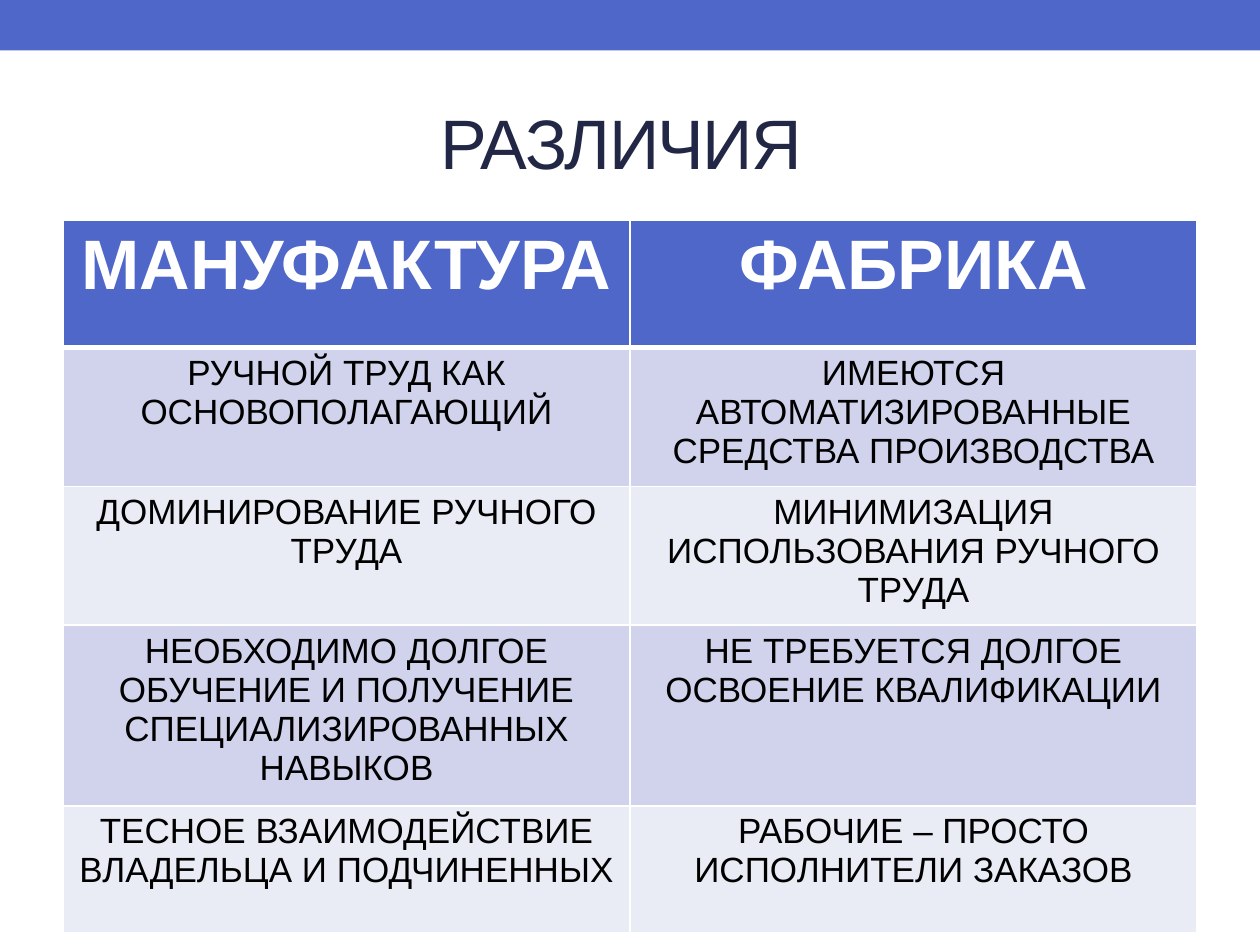
from dataclasses import dataclass

from lxml import etree
from pptx import Presentation
from pptx.dml.color import RGBColor
from pptx.enum.shapes import MSO_SHAPE
from pptx.enum.text import MSO_ANCHOR, PP_ALIGN
from pptx.oxml.ns import qn
from pptx.util import Inches, Pt

RECTANGLE = MSO_SHAPE.RECTANGLE
MIDDLE = MSO_ANCHOR.MIDDLE
CENTER = PP_ALIGN.CENTER


@dataclass(frozen=True)
class Theme:
    font: str = "Arial"
    accent: str = "4E67C8"
    title: str = "212745"
    white: str = "FFFFFF"
    body: str = "000000"
    bands: tuple = ("D0D3EB", "E9EBF5")
    large_size: int = 40
    body_size: int = 20
    line: int = 1
    header_line: int = 3


THEME = Theme()

COMPARISON = [
    ("МАНУФАКТУРА", "ФАБРИКА"),
    ("РУЧНОЙ ТРУД КАК ОСНОВОПОЛАГАЮЩИЙ",
     "ИМЕЮТСЯ АВТОМАТИЗИРОВАННЫЕ СРЕДСТВА ПРОИЗВОДСТВА"),
    ("ДОМИНИРОВАНИЕ РУЧНОГО ТРУДА",
     "МИНИМИЗАЦИЯ ИСПОЛЬЗОВАНИЯ РУЧНОГО ТРУДА"),
    ("НЕОБХОДИМО ДОЛГОЕ ОБУЧЕНИЕ И ПОЛУЧЕНИЕ СПЕЦИАЛИЗИРОВАННЫХ НАВЫКОВ",
     "НЕ ТРЕБУЕТСЯ ДОЛГОЕ ОСВОЕНИЕ КВАЛИФИКАЦИИ"),
    ("ТЕСНОЕ ВЗАИМОДЕЙСТВИЕ ВЛАДЕЛЬЦА И ПОДЧИНЕННЫХ",
     "РАБОЧИЕ – ПРОСТО ИСПОЛНИТЕЛИ ЗАКАЗОВ"),
]


def paint(fill, color):
    fill.solid()
    fill.fore_color.rgb = RGBColor.from_string(color)


def write(text_frame, text, size, color, bold=False):
    paragraph = text_frame.paragraphs[0]
    paragraph.alignment = CENTER
    run = paragraph.add_run()
    run.text = text
    run.font.name = THEME.font
    run.font.size = Pt(size)
    run.font.bold = bold
    run.font.color.rgb = RGBColor.from_string(color)
    return run


def add_top_band(slide):
    band = slide.shapes.add_shape(RECTANGLE, 0, 0, Inches(10), Inches(0.4))
    band.shadow.inherit = False
    paint(band.fill, THEME.accent)
    band.line.fill.background()


def add_title(slide, text):
    box = slide.shapes.add_textbox(Inches(0.5), Inches(0.58), Inches(9), Inches(1.08))
    box.text_frame.word_wrap = True
    box.text_frame.vertical_anchor = MIDDLE
    run = write(box.text_frame, text, THEME.large_size, THEME.title)
    run.font._element.set("spc", "-100")


def set_borders(cell, top, bottom):
    """Draw white borders; top and bottom are widths in points."""
    properties = cell._tc.get_or_add_tcPr()
    widths = {"lnL": THEME.line, "lnR": THEME.line, "lnT": top, "lnB": bottom}
    for index, (side, width) in enumerate(widths.items()):
        line = etree.Element(qn(f"a:{side}"), w=str(Pt(width)))
        solid = etree.SubElement(line, qn("a:solidFill"))
        etree.SubElement(solid, qn("a:srgbClr"), val=THEME.white)
        properties.insert(index, line)


def add_comparison_table(slide, rows):
    row_height = Inches(1.01)
    table = slide.shapes.add_table(
        len(rows), len(rows[0]), Inches(0.5), Inches(1.75),
        Inches(9), row_height * len(rows)).table
    for row_index, texts in enumerate(rows):
        table.rows[row_index].height = row_height
        header = row_index == 0
        for column_index, text in enumerate(texts):
            cell = table.cell(row_index, column_index)
            if header:
                paint(cell.fill, THEME.accent)
                write(cell.text_frame, text, THEME.large_size, THEME.white, bold=True)
            else:
                paint(cell.fill, THEME.bands[(row_index - 1) % 2])
                write(cell.text_frame, text, THEME.body_size, THEME.body)
            set_borders(
                cell,
                top=THEME.header_line if row_index == 1 else THEME.line,
                bottom=THEME.header_line if header else THEME.line)


def main():
    presentation = Presentation()
    presentation.slide_width = Inches(10)
    presentation.slide_height = Inches(7.5)
    slide = presentation.slides.add_slide(presentation.slide_layouts[6])
    paint(slide.background.fill, THEME.white)
    add_top_band(slide)
    add_title(slide, "РАЗЛИЧИЯ ")
    add_comparison_table(slide, COMPARISON)
    presentation.save("out.pptx")


if __name__ == "__main__":
    main()
